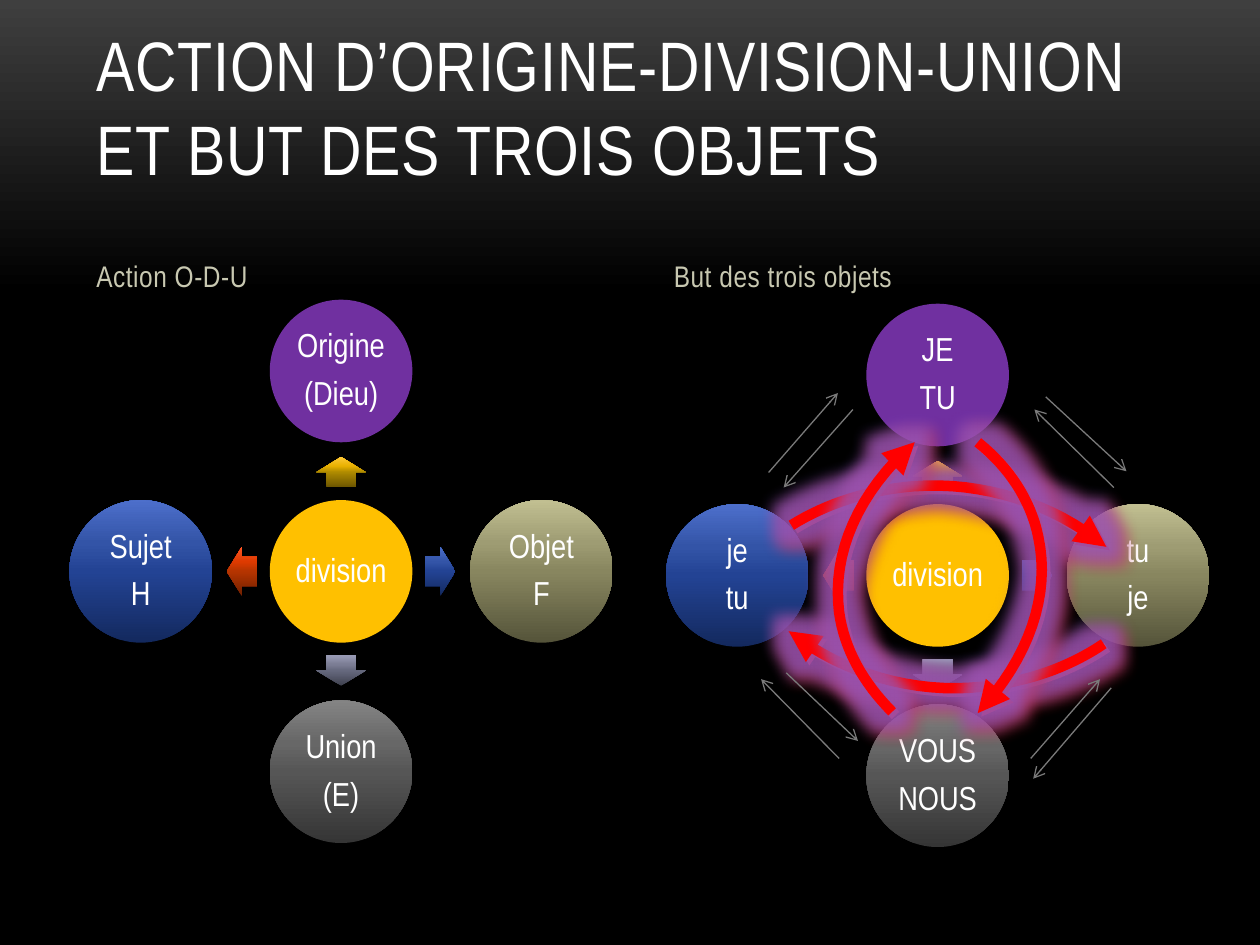
from lxml.etree import SubElement
from pptx import Presentation
from pptx.dml.color import RGBColor
from pptx.enum.shapes import MSO_CONNECTOR, MSO_SHAPE
from pptx.enum.text import MSO_ANCHOR, PP_ALIGN
from pptx.oxml.ns import qn
from pptx.util import Pt

FONT = "Arial Narrow"
COLORS = {"white": "FFFFFF", "label": "C8C8B1", "center": "FFC000", "origin": "7030A0",
          "curve": "FF0000", "shadow": "D1282E", "glow": "8A60D8", "thin": "7A7A7A"}
GRADIENTS = {
    "gold": ["6C5500", "AE8A00", "E8B000", "FFCA39"],
    "blue": ["13295E", "234394", "3354A7", "4D6FCB"],
    "olive": ["55543A", "88865F", "9E9C73", "C1BF91"],
    "slate": ["3F414F", "66697E", "7B7D94", "9A9CB6"],
    "gray": ["353535", "565656", "676767", "848484"],
    "red": ["702000", "B53400", "DE3A00", "FF5627"],
}


def set_gradient(fill, host, colors, positions, angle):
    fill.gradient()
    grad = next(host.iter(qn("a:gradFill")))
    grad.clear()
    grad.set("rotWithShape", "0")
    stops = SubElement(grad, qn("a:gsLst"))
    for color, pos in zip(colors, positions):
        gs = SubElement(stops, qn("a:gs"), pos=str(pos * 1000))
        SubElement(gs, qn("a:srgbClr"), val=color)
    SubElement(grad, qn("a:lin"), ang=str(angle * 60000), scaled="0")


def write(tf, lines, size, color, spacing=0, **formats):
    for i, line in enumerate(lines):
        p = tf.paragraphs[0] if i == 0 else tf.add_paragraph()
        for name, value in formats.items():
            setattr(p, name, value)
        r = p.add_run()
        r.text = line
        for name, value in {"name": FONT, "size": Pt(size)}.items():
            setattr(r.font, name, value)
        r.font.color.rgb = RGBColor.from_string(COLORS[color])
        if spacing:
            r.font._element.set("spc", str(spacing))


prs = Presentation()
prs.slide_width, prs.slide_height = Pt(720), Pt(540)
s = prs.slides.add_slide(prs.slide_layouts[6])
set_gradient(s.background.fill, s.element, ["3F3F3F", "000000", "000000"], [0, 31, 100], 90)

# Title and the two column headings
for box, text, size, color, spacing in [
    ((48, 21.6, 624, 90), "ACTION D’ORIGINE-DIVISION-UNION ET BUT DES TROIS OBJETS", 40, "white", 50),
    ((48, 126, 294, 45), "Action O-D-U", 17, "label", 30),
    ((378, 126, 294, 45), "But des trois objets", 17, "label", 30),
]:
    tf = s.shapes.add_textbox(*map(Pt, box)).text_frame
    tf.word_wrap = True
    tf.vertical_anchor = MSO_ANCHOR.BOTTOM
    write(tf, [text], size, color, spacing)

# Two radial diagrams: a centre, four satellites and four block arrows
DIAMETER, STEP, ARROW_STEP = 81.5, 114.5, 56.7
ARROW_W, ARROW_H = 17.3, 28.2
SPOTS = [  # direction, circle fill, arrow fill, arrow rotation
    ((0, 0), "center", None, 0),
    ((0, -1), "origin", "gold", 270),
    ((1, 0), "olive", "blue", 0),
    ((0, 1), "gray", "slate", 90),
    ((-1, 0), "blue", "red", 180),
]
DIAGRAMS = [
    ((194.9, 326.5), [["division"], ["Origine", "(Dieu)"], ["Objet", "F"], ["Union", "(E)"], ["Sujet", "H"]]),
    ((535.8, 328.8), [["division"], ["JE", "TU"], ["tu", "je"], ["VOUS", "NOUS"], ["je", "tu"]]),
]
for (cx, cy), labels in DIAGRAMS:
    for ((dx, dy), circle_fill, arrow_fill, rotation), lines in zip(SPOTS, labels):
        parts = [(MSO_SHAPE.OVAL, STEP, DIAMETER, DIAMETER, circle_fill, 0)]
        if arrow_fill:
            parts.append((MSO_SHAPE.RIGHT_ARROW, ARROW_STEP, ARROW_W, ARROW_H, arrow_fill, rotation))
        for kind, step, w, h, fill, turn in parts:
            sp = s.shapes.add_shape(kind, Pt(cx + dx * step - w / 2), Pt(cy + dy * step - h / 2), Pt(w), Pt(h))
            sp.shadow.inherit = False
            sp.line.fill.background()
            sp.rotation = turn
            if fill in GRADIENTS:
                set_gradient(sp.fill, sp.element, GRADIENTS[fill], [0, 50, 70, 100], 270)
            else:
                sp.fill.solid()
                sp.fill.fore_color.rgb = RGBColor.from_string(COLORS[fill])
            if kind == MSO_SHAPE.RIGHT_ARROW:
                sp.adjustments[0], sp.adjustments[1] = 0.6, 0.5
                continue
            tf = sp.text_frame
            for name, value in {"word_wrap": False, "vertical_anchor": MSO_ANCHOR.MIDDLE,
                                "margin_left": Pt(2), "margin_right": Pt(2),
                                "margin_top": Pt(2), "margin_bottom": Pt(2)}.items():
                setattr(tf, name, value)
            write(tf, lines, 19, "white", alignment=PP_ALIGN.CENTER, line_spacing=0.9, space_after=Pt(6.65))

# Glowing red curves, each made of two cubic Bézier pieces
CURVES = [
    [(452.2, 300.2), (473, 287.3), (496.8, 280.1), (522, 277.9), (561.6, 275), (601.2, 287.3), (632.2, 312.5)],
    [(630.7, 367.9), (610.6, 381.6), (586.8, 389.5), (561.6, 392.4), (522, 396.7), (482.4, 385.2), (450.7, 360.7)],
    [(509.8, 406.8), (493.2, 390.2), (482.4, 370.8), (479.5, 349.9), (475.2, 316.1), (490.3, 281.5), (522.7, 252.7)],
    [(558.7, 252.7), (576.7, 267.1), (589, 285.8), (593.3, 306.7), (600.5, 339.8), (588.2, 375.8), (558.7, 407.5)],
]
SAMPLES = 16
for curve in CURVES:
    points = []
    for a, b, c, d in (curve[:4], curve[3:]):
        for i in range(1, SAMPLES + 1):
            t = i / SAMPLES
            u = 1 - t
            points.append(tuple(Pt(u**3 * a[k] + 3 * u * u * t * b[k] + 3 * u * t * t * c[k] + t**3 * d[k])
                                for k in (0, 1)))
    builder = s.shapes.build_freeform(*map(Pt, curve[0]))
    builder.add_line_segments(points, close=False)
    sp = builder.convert_to_shape()
    sp.fill.background()
    sp.line.width = Pt(6)
    sp.line.color.rgb = RGBColor.from_string(COLORS["curve"])
    SubElement(sp.element.spPr.find(qn("a:ln")), qn("a:tailEnd"), type="triangle")
    sp.shadow.inherit = False
    effects = sp.element.spPr.find(qn("a:effectLst"))
    glow = SubElement(effects, qn("a:glow"), rad=str(Pt(18)))
    tint = SubElement(glow, qn("a:srgbClr"), val=COLORS["glow"])
    SubElement(tint, qn("a:alpha"), val="65000")
    shadow = SubElement(effects, qn("a:outerShdw"), dist=str(Pt(2.8)), dir="2700000")
    SubElement(shadow, qn("a:srgbClr"), val=COLORS["shadow"])

# Thin arrow pairs between neighbouring circles
for x1, y1, x2, y2 in [
    (439.2, 270, 478.8, 224.6), (487.4, 234, 447.8, 278.6),
    (636.5, 278.6, 591.1, 234), (597.6, 226.8, 643.7, 269.3),
    (589, 433.4, 628.6, 388.1), (635, 393.1, 590.4, 445),
    (479.5, 433.4, 434.9, 388.1), (449.3, 384.5, 490.3, 423.4),
]:
    line = s.shapes.add_connector(MSO_CONNECTOR.STRAIGHT, Pt(x1), Pt(y1), Pt(x2), Pt(y2))
    line.line.width = Pt(0.75)
    line.line.color.rgb = RGBColor.from_string(COLORS["thin"])
    SubElement(line.element.spPr.find(qn("a:ln")), qn("a:tailEnd"), type="arrow")
    SubElement(line.element.spPr, qn("a:effectLst"))

prs.save("out.pptx")
